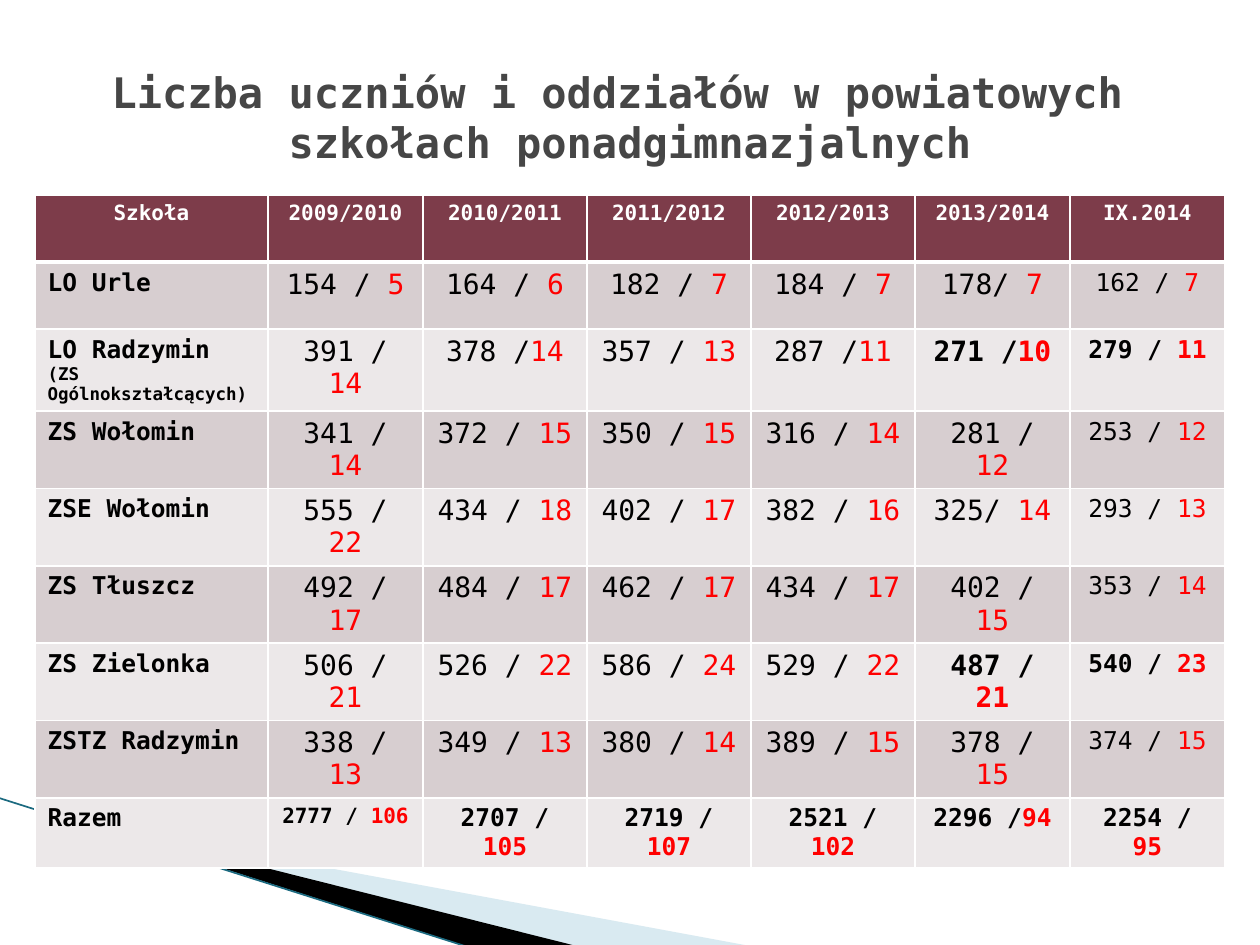
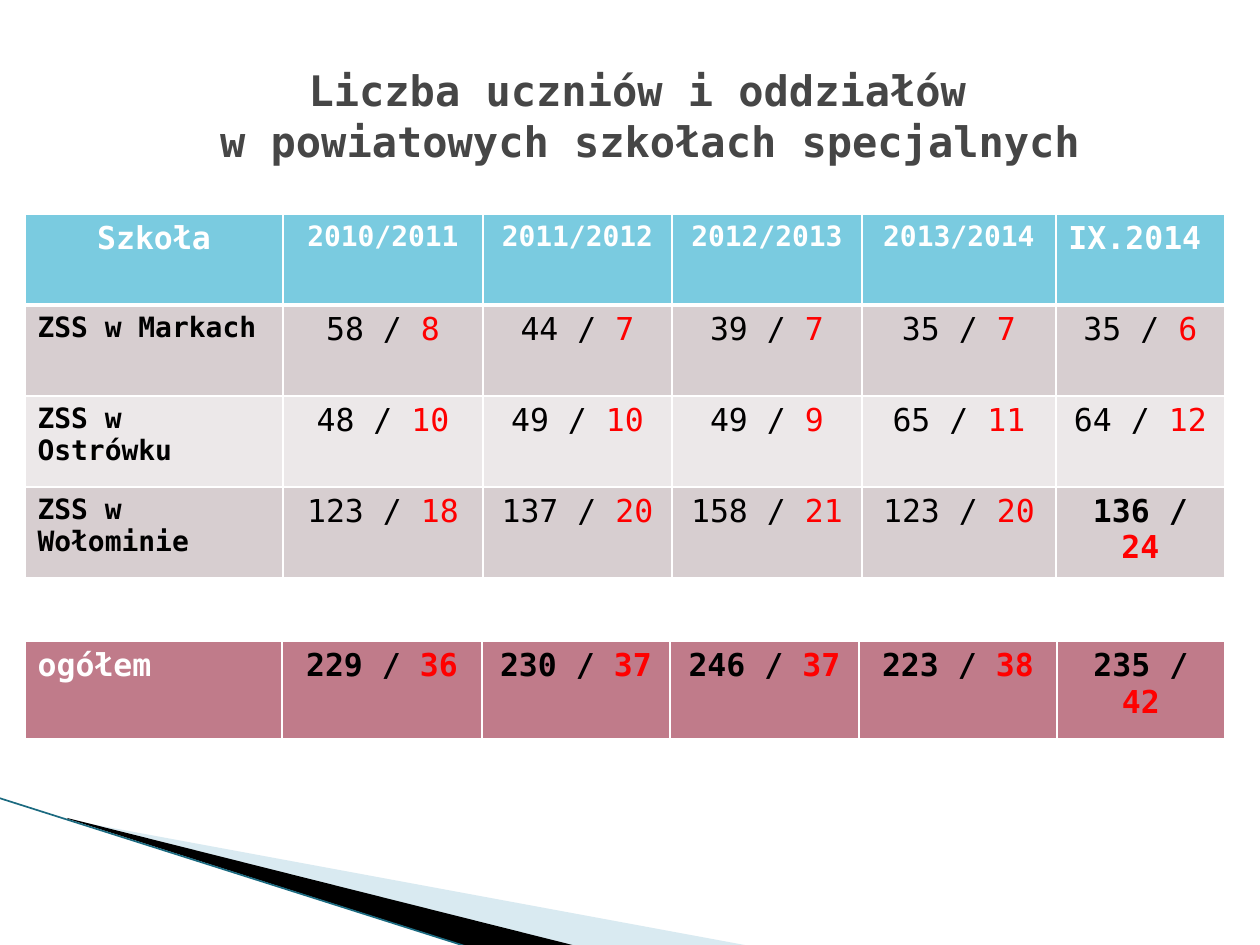
from pptx import Presentation, util as u
from pptx.dml.color import RGBColor
from pptx.enum import shapes, text
from pptx.oxml.ns import qn
from lxml import etree

SCALE = u.Inches(1) / 126
FONT = "DejaVu Sans Mono"
WHITE, BLACK, RED, GREY = "FFFFFF", "000000", "FF0000", "464646"
MAROON, SKY, ROSE = "7D3C4A", "7ACBE0", "C07B8A"
BANDS = "D7CED0", "ECE8E9"
PALE_BLUE, TEAL = "A0CBDC", "1B6A80"
LEFT, CENTER = text.PP_ALIGN.LEFT, text.PP_ALIGN.CENTER

SCHOOLS = [
    ["Szkoła", "2009/2010", "2010/2011", "2011/2012", "2012/2013", "2013/2014", "IX.2014"],
    ["LO Urle", "154 / 5", "164 / 6", "182 / 7", "184 / 7", "178/ 7", "162 / 7"],
    ["LO Radzymin\n(ZS Ogólnokształcących)", "391 / 14", "378 /14", "357 / 13", "287 /11",
     "271 /10", "279 / 11"],
    ["ZS Wołomin", "341 / 14", "372 / 15", "350 / 15", "316 / 14", "281 / 12", "253 / 12"],
    ["ZSE Wołomin", "555 / 22", "434 / 18", "402 / 17", "382 / 16", "325/ 14", "293 / 13"],
    ["ZS Tłuszcz", "492 / 17", "484 / 17", "462 / 17", "434 / 17", "402 / 15", "353 / 14"],
    ["ZS Zielonka", "506 / 21", "526 / 22", "586 / 24", "529 / 22", "487 / 21", "540 / 23"],
    ["ZSTZ Radzymin", "338 / 13", "349 / 13", "380 / 14", "389 / 15", "378 / 15", "374 / 15"],
    ["Razem", "2777 / 106", "2707 / 105", "2719 / 107", "2521 / 102", "2296 /94", "2254 / 95"],
]
SPECIAL_SCHOOLS = [
    ["Szkoła", "2010/2011", "2011/2012", "2012/2013", "2013/2014", "IX.2014"],
    ["ZSS w Markach", "58 / 8", "44 / 7", "39 / 7", "35 / 7", "35 / 6"],
    ["ZSS w Ostrówku", "48 / 10", "49 / 10", "49 / 9", "65 / 11", "64 / 12"],
    ["ZSS w Wołominie", "123 / 18", "137 / 20", "158 / 21", "123 / 20", "136 / 24"],
]
SPECIAL_TOTAL = [["ogółem", "229 / 36", "230 / 37", "246 / 37", "223 / 38", "235 / 42"]]


def px(length):
    """Turn pixels into EMU."""
    return u.Emu(round(length * SCALE))


def rgb(value):
    """Turn a hex string into a colour."""
    return RGBColor.from_string(value)


def format_font(font, color, **values):
    """Set the shared typeface, a colour and any further font values."""
    font.color.rgb = rgb(color)
    for name, value in {"name": FONT, **values}.items():
        setattr(font, name, value)


def add_wedge(slide, points, color, opacity=100):
    """Draw a filled outline through the points."""
    builder = slide.shapes.build_freeform(*points[0], scale=SCALE)
    builder.add_line_segments(points[1:])
    shape = builder.convert_to_shape()
    shape.shadow.inherit = False
    shape.fill.solid()
    shape.fill.fore_color.rgb = rgb(color)
    shape.line.fill.background()
    if opacity < 100:
        color_element = shape.fill._xPr.find(qn("a:solidFill"))[0]
        etree.SubElement(color_element, qn("a:alpha"), val=str(opacity * 1000))


def add_line(slide, start, end, color, width):
    """Draw a straight line without a shadow."""
    points = [px(value) for value in (*start, *end)]
    line = slide.shapes.add_connector(shapes.MSO_CONNECTOR.STRAIGHT, *points)
    line.line.color.rgb = rgb(color)
    line.line.width = u.Pt(width)
    etree.SubElement(line._element.spPr, qn("a:effectLst"))


def add_slide(presentation, title, box):
    """Add a slide with its corner wedges and formatted title."""
    slide = presentation.slides.add_slide(presentation.slide_layouts[5])
    add_wedge(slide, [(69, 820), (750, 946), (575, 946), (69, 819)], PALE_BLUE, 40)
    add_wedge(slide, [(67, 818), (576, 946), (469, 947), (68, 819)], BLACK)
    add_line(slide, (-1, 798), (468, 947), TEAL, 0.95)
    shape = slide.shapes.title
    for name, value in zip(("left", "top", "width", "height"), box):
        setattr(shape, name, px(value))
    frame = shape.text_frame
    frame.text = title
    frame.word_wrap = True
    frame.auto_size = text.MSO_AUTO_SIZE.NONE
    frame.vertical_anchor = text.MSO_ANCHOR.MIDDLE
    paragraph = frame.paragraphs[0]
    paragraph.alignment = CENTER
    for run in paragraph.runs:
        format_font(run.font, GREY, size=u.Pt(24), bold=True)
    return slide


def set_borders(cell, **widths):
    """Give each named side of a cell a white line."""
    properties = cell._tc.get_or_add_tcPr()
    for side, width in widths.items():
        line = etree.SubElement(properties, qn(f"a:ln{side}"), w=str(u.Pt(width)))
        fill = etree.SubElement(line, qn("a:solidFill"))
        etree.SubElement(fill, qn("a:srgbClr"), val=WHITE)


def write_cell(cell, content, size, bold, color, alignment, is_count):
    """Write a label, or a pupil count followed by a red class count."""
    for index, line in enumerate(content.split("\n")):
        frame = cell.text_frame
        paragraph = frame.add_paragraph() if index else frame.paragraphs[0]
        paragraph.alignment = alignment
        pupils = line.rstrip("0123456789") if is_count else line
        parts = [(pupils, color), (line[len(pupils):], RED)]
        for part, part_color in parts[:1 + is_count]:
            run = paragraph.add_run()
            run.text = part
            format_font(run.font, part_color, size=u.Pt(10 if index else size), bold=bold)


def add_table(slide, corner, widths, row_height, rows, fills, style):
    """Add a table whose style function gives size, weight, colour and alignment."""
    frame = slide.shapes.add_table(len(rows), len(widths), px(corner[0]), px(corner[1]),
                                   px(sum(widths)), px(row_height * len(rows)))
    table = frame.table
    for column, width in zip(table.columns, widths):
        column.width = px(width)
    for row, contents in enumerate(rows):
        table.rows[row].height = px(row_height)
        for column, content in enumerate(contents):
            cell = table.cell(row, column)
            set_borders(cell, L=1, R=1, T=3 if row == 1 else 1, B=1 if row else 3)
            cell.fill.solid()
            cell.fill.fore_color.rgb = rgb(fills[row])
            write_cell(cell, content, *style(row, column), is_count=" " in content and column > 0)


def school_style(row, column):
    """Style a cell of the secondary school table."""
    total_row = len(SCHOOLS) - 1
    if row == 0:
        return 12, True, WHITE, CENTER
    if column == 0:
        return 14, True, BLACK, LEFT
    if row == total_row:
        return 12 if column == 1 else 14, True, BLACK, CENTER
    return 14 if column == 6 else 16, row in (2, 6) and column >= 5, BLACK, CENTER


def special_style(row, column):
    """Style a cell of the special school table."""
    if row == 0:
        return 18 if column in (0, 5) else 16, True, WHITE, LEFT if column == 5 else CENTER
    if column == 0:
        return 16, True, BLACK, LEFT
    return 18, (row, column) == (3, 5), BLACK, CENTER


def total_style(row, column):
    """Style a cell of the special school total."""
    return (18, True, BLACK, CENTER) if column else (18, True, WHITE, LEFT)


def banded_fills(header, rows):
    """List a header fill and the alternating fills below it."""
    return [header] + [BANDS[index % 2] for index in range(len(rows) - 1)]


def main():
    """Build both slides and save them."""
    presentation = Presentation()
    presentation.slide_width, presentation.slide_height = px(1260), px(945)

    slide = add_slide(presentation, "Liczba uczniów i oddziałów w powiatowych \v"
                      "szkołach ponadgimnazjalnych", (63, 38, 1134, 158))
    add_table(slide, (35, 195), [233, 155, 164, 164, 164, 155, 155], 67, SCHOOLS,
              banded_fills(MAROON, SCHOOLS), school_style)

    slide = add_slide(presentation, "Liczba uczniów i oddziałów \v"
                      "w powiatowych szkołach specjalnych", (144, 36, 1012, 158))
    add_table(slide, (25, 214), [258, 200, 189, 190, 194, 169], 91, SPECIAL_SCHOOLS,
              banded_fills(SKY, SPECIAL_SCHOOLS), special_style)
    add_table(slide, (25, 641), [257, 200, 188, 189, 198, 168], 99, SPECIAL_TOTAL,
              [ROSE], total_style)
    presentation.save("out.pptx")


if __name__ == "__main__":
    main()
